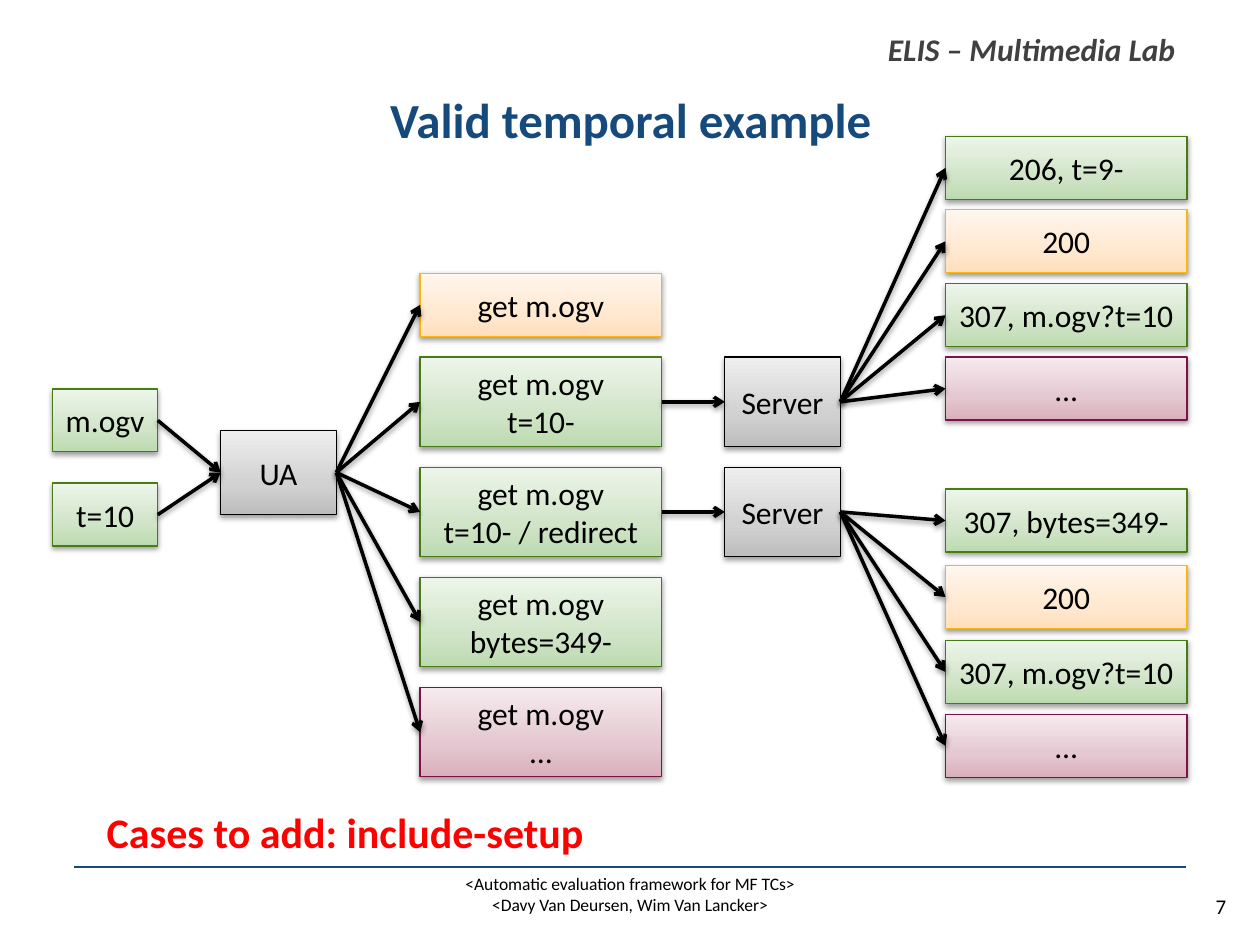
from lxml import etree
from pptx import Presentation
from pptx import util as u
from pptx.dml.color import RGBColor
from pptx.enum import shapes, text
from pptx.oxml import parse_xml
from pptx.oxml.ns import nsdecls, qn

FONT = "Calibri"
NAVY = "164A7C"
PALETTE = {
    "green": ("487B13", "BCDAAF", "D0E4C7", "EDF5EA"),
    "orange": ("FDB60C", "FFDFBC", "FFE8D0", "FFF6ED"),
    "pink": ("7B1348", "DAAFBC", "E4C7D0", "F5EAED"),
    "grey": ("000000", "BDBDBD", "D1D1D1", "EEEEEE"),
}


def color(value):
    """Turn a hex string into a colour."""
    return RGBColor.from_string(value)


def style(tf, size, fill, align, bold=False, italic=False):
    """Format every paragraph of a text frame alike."""
    for p in tf.paragraphs:
        p.alignment = align
        p.font.name, p.font.size = FONT, u.Pt(size)
        p.font.bold, p.font.italic = bold, italic
        p.font.color.rgb = color(fill)


def add_text(s, box, content, size, fill="000000", align=text.PP_ALIGN.CENTER,
             wrap=True, anchor=text.MSO_ANCHOR.TOP, **weight):
    """Add a text box at a box given in centimetres."""
    tf = s.shapes.add_textbox(*map(u.Cm, box)).text_frame
    tf.text, tf.word_wrap, tf.vertical_anchor = content, wrap, anchor
    style(tf, size, fill, align, **weight)


def add_shadow(sp):
    """Give a shape or connector a soft shadow below it."""
    sp._element.spPr.append(parse_xml(
        f'<a:effectLst {nsdecls("a")}><a:outerShdw blurRad="40000" dist="20000" '
        'dir="5400000" rotWithShape="0"><a:srgbClr val="000000">'
        '<a:alpha val="38000"/></a:srgbClr></a:outerShdw></a:effectLst>'))


def add_node(s, box, label, tone):
    """Add a labelled rectangle with a vertical gradient."""
    border, *stops = PALETTE[tone]
    sp = s.shapes.add_shape(shapes.MSO_SHAPE.RECTANGLE, *map(u.Cm, box))
    sp.line.color.rgb, sp.line.width = color(border), u.Pt(0.75)
    sp.fill.background()
    gs = "".join(f'<a:gs pos="{pos}000"><a:srgbClr val="{c}"/></a:gs>'
                 for pos, c in zip((0, 35, 100), stops))
    props = sp._element.spPr
    props.replace(props.find(qn("a:noFill")), parse_xml(
        f'<a:gradFill {nsdecls("a")} rotWithShape="1"><a:gsLst>{gs}</a:gsLst>'
        '<a:lin ang="16200000" scaled="0"/></a:gradFill>'))
    add_shadow(sp)
    tf = sp.text_frame
    tf.text, tf.vertical_anchor = label, text.MSO_ANCHOR.MIDDLE
    tf.margin_left = tf.margin_right = 0
    style(tf, 18, "000000", text.PP_ALIGN.CENTER)
    return sp


def add_arrow(s, start, end):
    """Join the right side of one node to the left side of another."""
    arrow = s.shapes.add_connector(shapes.MSO_CONNECTOR.STRAIGHT, 0, 0, 0, 0)
    arrow.begin_connect(start, 3)
    arrow.end_connect(end, 1)
    arrow.line.color.rgb, arrow.line.width = color("000000"), u.Pt(2)
    etree.SubElement(arrow.line._get_or_add_ln(), qn("a:tailEnd"), type="arrow")
    add_shadow(arrow)


def header(s, box):
    """Place the lab name and the slide title."""
    x, y, w, h = box
    add_text(s, (x + 16.25, y, 6.35, 1.03), "ELIS – Multimedia Lab", 18, "404040",
             text.PP_ALIGN.JUSTIFY, wrap=False, bold=True, italic=True)
    add_text(s, (x, y + 0.99, w, h - 0.99), "Valid temporal example", 28, NAVY,
             anchor=text.MSO_ANCHOR.MIDDLE, bold=True)


def diagram(s, box):
    """Place the request flow from inputs to server replies."""
    x, y, w, h = box

    def column(left, width, height, rows):
        """Stack nodes that share a left edge and a size."""
        return [add_node(s, (x + left, y + top, width, height), label, tone)
                for top, label, tone in rows]

    inputs = column(0, 2.12, 1.27, [(5.09, "m.ogv", "green"), (6.99, "t=10", "green")])
    agent, = column(3.39, 2.33, 1.69, [(5.93, "UA", "grey")])
    requests = column(7.41, 4.87, 1.27, [(2.76, "get m.ogv", "orange")])
    details = [("t=10-", "green"), ("t=10- / redirect", "green"),
               ("bytes=349-", "green"), ("…", "pink")]
    requests += column(7.41, 4.87, 1.8, [
        (4.45 + 2.22 * i, f"get m.ogv\n{detail}", tone)
        for i, (detail, tone) in enumerate(details)])
    servers = column(13.55, 2.33, 1.8, [(4.45, "Server", "grey"), (6.67, "Server", "grey")])

    for sp in inputs:
        add_arrow(s, sp, agent)
    for sp in requests:
        add_arrow(s, agent, sp)
    groups = [("206, t=9-", (0, 1.48, 2.97, 4.45)),
              ("307, bytes=349-", (7.11, 8.65, 10.16, 11.65))]
    for request, server, (first, tops) in zip(requests[1:], servers, groups):
        add_arrow(s, request, server)
        labels = (first, "200", "307, m.ogv?t=10", "…")
        tones = ("green", "orange", "green", "pink")
        for reply in column(w - 4.87, 4.87, 1.27, zip(tops, labels, tones)):
            add_arrow(s, server, reply)


def footer(s, box):
    """Place the rule, the talk details and the page number."""
    x, y, w, h = box
    rule = s.shapes.add_connector(shapes.MSO_CONNECTOR.STRAIGHT,
                                  *map(u.Cm, (x, y, x + w, y)))
    rule.line.color.rgb, rule.line.width = color(NAVY), u.Pt(1.5)
    etree.SubElement(rule._element.spPr, qn("a:effectLst"))
    add_text(s, (x, y, w, h), "<Automatic evaluation framework for MF TCs>\n"
             "<Davy Van Deursen, Wim Van Lancker>", 10)
    add_text(s, (x + 22.33, y + 0.4, 1.57, 0.77), "7", 12)


def main():
    """Build the slide and save it."""
    prs = Presentation()
    prs.slide_width, prs.slide_height = u.Cm(25.4), u.Cm(19.05)
    s = prs.slides.add_slide(prs.slide_layouts[6])
    header(s, (1.4, 0.48, 22.63, 2.85))
    diagram(s, (1.06, 2.75, 22.87, 12.92))
    add_text(s, (1.9, 16.13, 19.58, 1.28), "Cases to add: include-setup", 24, "FF0000",
             text.PP_ALIGN.LEFT, bold=True)
    footer(s, (1.5, 17.48, 22.4, 1.55))
    prs.save("out.pptx")


if __name__ == "__main__":
    main()
